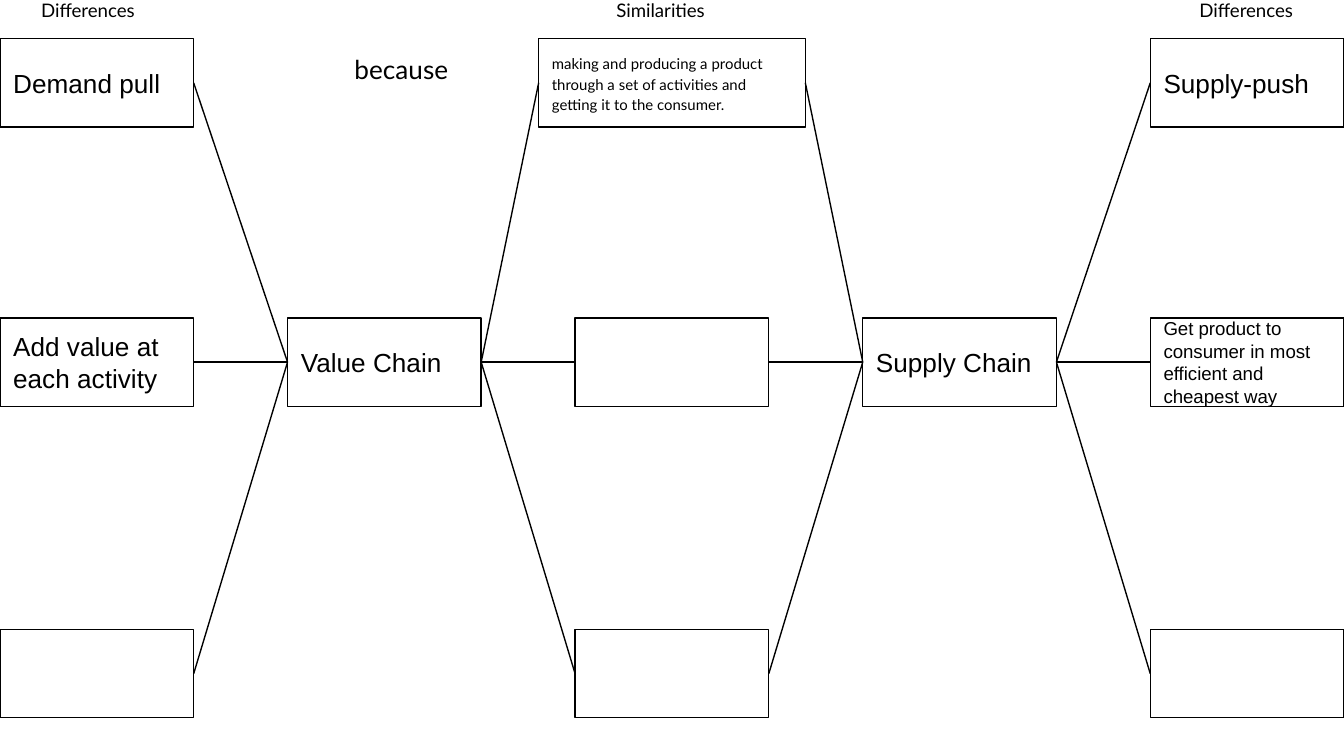
from lxml import etree
from pptx import Presentation
from pptx import util as u
from pptx.dml.color import RGBColor
from pptx.enum import shapes, text
from pptx.oxml.ns import qn

COLOURS = {name: RGBColor.from_string(value) for name, value in {
    "ink": "000000",
    "background": "FFFFFF",
}.items()}

presentation = Presentation()
presentation.slide_width, presentation.slide_height = u.Cm(25.4), u.Cm(14.29)
slide = presentation.slides.add_slide(presentation.slide_layouts[6])
slide.background.fill.solid()
slide.background.fill.fore_color.rgb = COLOURS["background"]


def write(shape, wording, font, size, anchor):
    frame = shape.text_frame
    frame.word_wrap = True
    frame.vertical_anchor = anchor
    frame.margin_left = frame.margin_right = u.Cm(0.25)
    frame.margin_top = frame.margin_bottom = u.Cm(0.25)
    paragraph = frame.paragraphs[0]
    paragraph.alignment = text.PP_ALIGN.LEFT
    run = paragraph.add_run()
    run.text = wording
    run.font.name, run.font.size = font, u.Pt(size)
    run.font.color.rgb = COLOURS["ink"]
    return paragraph


# Boxes on a grid of five columns and three rows
BOX_WIDTH, BOX_HEIGHT, WIDE_BOX = 3.66, 1.67, 5.04
COLUMN_STEP = (25.4 - BOX_WIDTH) / 4
ROW_TOPS = [0.73, 6.01, 11.9]
VALUE, SHARED, SUPPLY = 1, 2, 3
box_texts = {
    (0, 0): ("Demand pull", "Arial", 14),
    (0, 1): ("Add value at each activity", "Arial", 14),
    (VALUE, 1): ("Value Chain", "Arial", 14),
    (SHARED, 0): ("making and producing a product through a set of activities "
                  "and getting it to the consumer.", "Lato", 8),
    (SUPPLY, 1): ("Supply Chain", "Arial", 14),
    (4, 0): ("Supply-push", "Arial", 14),
    (4, 1): ("Get product to consumer in most efficient and cheapest way", "Arial", 10),
}
boxes = {}
for column in range(5):
    for row, top in enumerate(ROW_TOPS):
        if column in (VALUE, SUPPLY) and row != 1:
            continue
        cell = (column, row)
        width = WIDE_BOX if cell == (SHARED, 0) else BOX_WIDTH
        left = column * COLUMN_STEP + (BOX_WIDTH - width) / 2
        box = slide.shapes.add_shape(
            shapes.MSO_SHAPE.RECTANGLE, u.Cm(left), u.Cm(top), u.Cm(width), u.Cm(BOX_HEIGHT))
        box.shadow.inherit = False
        box.fill.background()
        box.line.color.rgb, box.line.width = COLOURS["ink"], u.Pt(0.75)
        boxes[cell] = box
        if cell in box_texts:
            paragraph = write(box, *box_texts[cell], text.MSO_ANCHOR.MIDDLE)
            if cell == (SHARED, 0):
                paragraph.line_spacing = 1.15
                paragraph.space_before = paragraph.space_after = u.Pt(12)

# Lines from each chain to the three boxes on either side
LEFT_SIDE, RIGHT_SIDE = 1, 3
for hub in (VALUE, SUPPLY):
    for column, hub_side, box_side in ((hub - 1, LEFT_SIDE, RIGHT_SIDE),
                                       (hub + 1, RIGHT_SIDE, LEFT_SIDE)):
        for row in range(3):
            connector = slide.shapes.add_connector(shapes.MSO_CONNECTOR.STRAIGHT, 0, 0, 0, 0)
            connector.begin_connect(boxes[hub, 1], hub_side)
            connector.end_connect(boxes[column, row], box_side)
            connector.line.color.rgb, connector.line.width = COLOURS["ink"], u.Pt(0.75)
            etree.SubElement(connector._element.spPr, qn("a:effectLst"))

# Headings and the linking word
for wording, left, top, width, height, size in (
    ("Differences", 0.53, -0.23, 2.59, 0.94, 10),
    ("Similarities", 11.4, -0.23, 2.59, 0.94, 10),
    ("Differences", 22.42, -0.23, 2.59, 0.94, 10),
    ("because", 6.45, 0.76, 3, 1.12, 14),
):
    label = slide.shapes.add_textbox(u.Cm(left), u.Cm(top), u.Cm(width), u.Cm(height))
    write(label, wording, "Lato", size, text.MSO_ANCHOR.TOP)

presentation.save("out.pptx")
